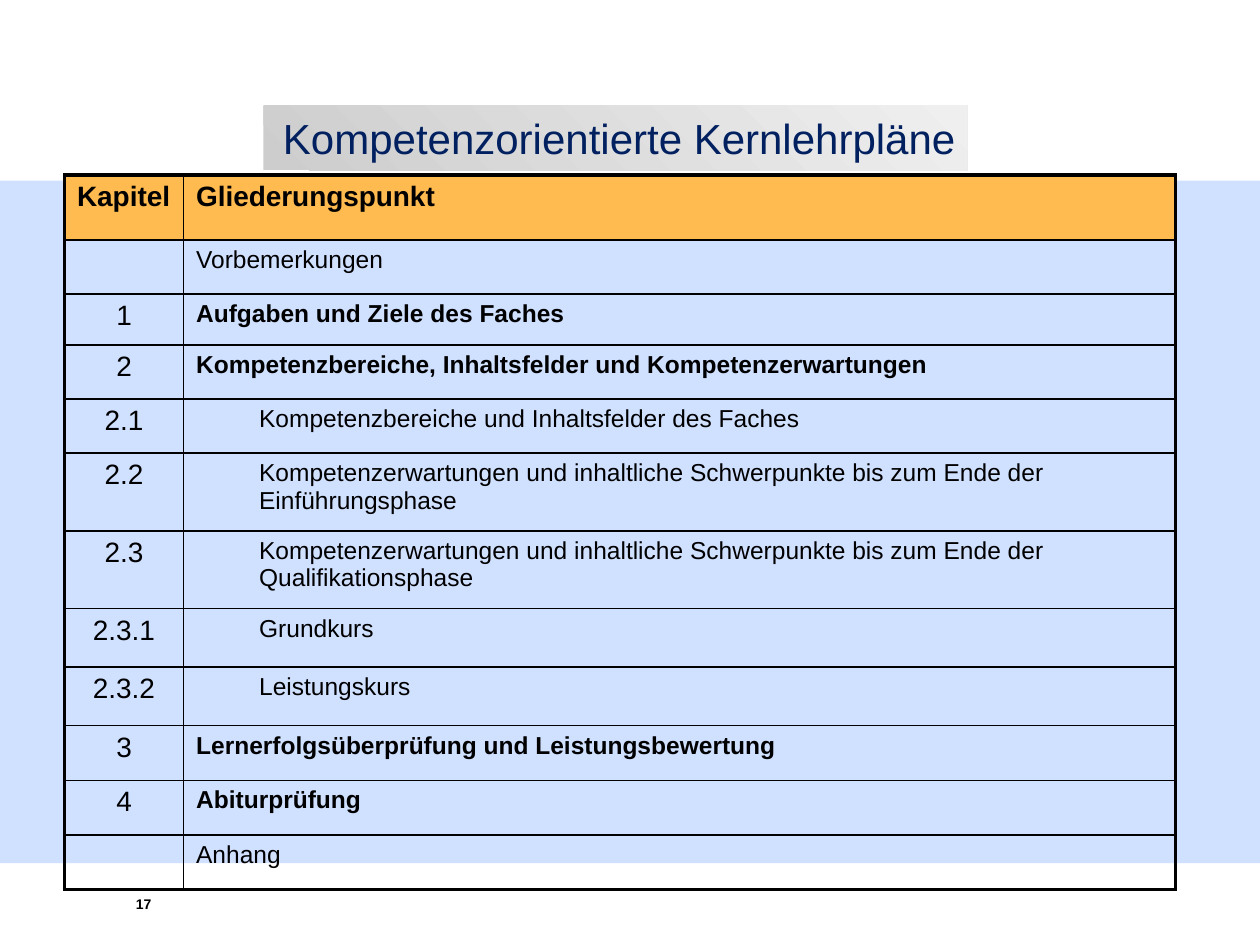
"""Build a slide with the chapter table of the competence-based curricula."""
from lxml import etree
from pptx import Presentation
from pptx.dml.color import RGBColor
from pptx.enum.shapes import MSO_SHAPE
from pptx.enum.text import MSO_ANCHOR, PP_ALIGN
from pptx.oxml.ns import qn
from pptx.util import Cm, Pt

RECT = MSO_SHAPE.RECTANGLE
MIDDLE = MSO_ANCHOR.MIDDLE
LEFT, CENTER, RIGHT = PP_ALIGN.LEFT, PP_ALIGN.CENTER, PP_ALIGN.RIGHT


def paint(color, code):
    color.rgb = RGBColor.from_string(code)


def write(frame, text, size, code="000000", bold=False, align=LEFT):
    frame.word_wrap = True
    para = frame.paragraphs[0]
    para.text = text
    para.alignment = align
    para.font.name = "Arial"
    para.font.size = Pt(size)
    para.font.bold = bold
    paint(para.font.color, code)
    return para


deck = Presentation()
deck.slide_width, deck.slide_height = Cm(25.4), Cm(19.05)
slide = deck.slides.add_slide(deck.slide_layouts[6])
shapes = slide.shapes

band = shapes.add_shape(RECT, 0, Cm(3.64), Cm(25.4), Cm(13.76))
band.shadow.inherit = False
band.line.fill.background()
band.fill.solid()
paint(band.fill.fore_color, "6699FF")
tint = band.fill._xPr.find(".//" + qn("a:srgbClr"))
etree.SubElement(tint, qn("a:alpha"), val="30000")

page = shapes.add_textbox(Cm(2.49), Cm(17.93), Cm(21.54), Cm(0.94))
write(page.text_frame, "17", 8, bold=True)

# level: 0 plain, 1 bold, 2 indented
rows = [
    ("Kapitel", "Gliederungspunkt", 1, 1.31),
    ("", "Vorbemerkungen", 0, 1.09),
    ("1", "Aufgaben und Ziele des Faches", 1, 1.02),
    ("2", "Kompetenzbereiche, Inhaltsfelder und Kompetenzerwartungen", 1, 1.09),
    ("2.1", "Kompetenzbereiche und Inhaltsfelder des Faches", 2, 1.09),
    ("2.2", "Kompetenzerwartungen und inhaltliche Schwerpunkte bis zum Ende der "
     "Einführungsphase", 2, 1.57),
    ("2.3", "Kompetenzerwartungen und inhaltliche Schwerpunkte bis zum Ende der "
     "Qualifikationsphase", 2, 1.57),
    ("2.3.1", "Grundkurs", 2, 1.18),
    ("2.3.2", "Leistungskurs", 2, 1.18),
    ("3", "Lernerfolgsüberprüfung und Leistungsbewertung", 1, 1.1),
    ("4", "Abiturprüfung", 1, 1.1),
    ("", "Anhang", 0, 1.1),
]
last = len(rows) - 1
table = shapes.add_table(len(rows), 2, Cm(1.3), Cm(3.53), Cm(22.4), Cm(14.4)).table
table.horz_banding = False
table.columns[0].width, table.columns[1].width = Cm(2.4), Cm(20)

for r, (mark, title, level, height) in enumerate(rows):
    table.rows[r].height = Cm(height)
    head = r == 0
    for c, text in enumerate((mark, title)):
        cell = table.cell(r, c)
        size = 16 if head or c == 0 else 14
        bold = head or (c == 1 and level == 1)
        align = CENTER if c == 0 and not head else LEFT
        para = write(cell.text_frame, text, size, bold=bold, align=align)
        if c == 1 and level == 2:
            para.level = 1
            para._p.get_or_add_pPr().set("marL", str(Cm(1.27)))
        props = cell._tc.get_or_add_tcPr()
        edges = {"lnL": c == 0, "lnR": c == 1, "lnT": head, "lnB": r == last}
        for tag, outer in edges.items():
            width = Pt(2.25 if outer else 1)
            line = etree.SubElement(props, qn("a:" + tag), w=str(width))
            solid = etree.SubElement(line, qn("a:solidFill"))
            etree.SubElement(solid, qn("a:srgbClr"), val="000000")
        if head:
            cell.fill.solid()
            paint(cell.fill.fore_color, "FFBB50")
        else:
            cell.fill.background()

title = shapes.add_shape(RECT, Cm(5.31), Cm(2.13), Cm(14.2), Cm(1.3))
title.shadow.inherit = False
title.line.fill.background()
title.fill.gradient()
title.fill.gradient_angle = 45
for stop, code in zip(title.fill.gradient_stops, ("CDCDCD", "EFEFEF")):
    paint(stop.color, code)
title.text_frame.vertical_anchor = MIDDLE
write(title.text_frame, "Kompetenzorientierte Kernlehrpläne", 24, "002060", align=RIGHT)

deck.save("out.pptx")
